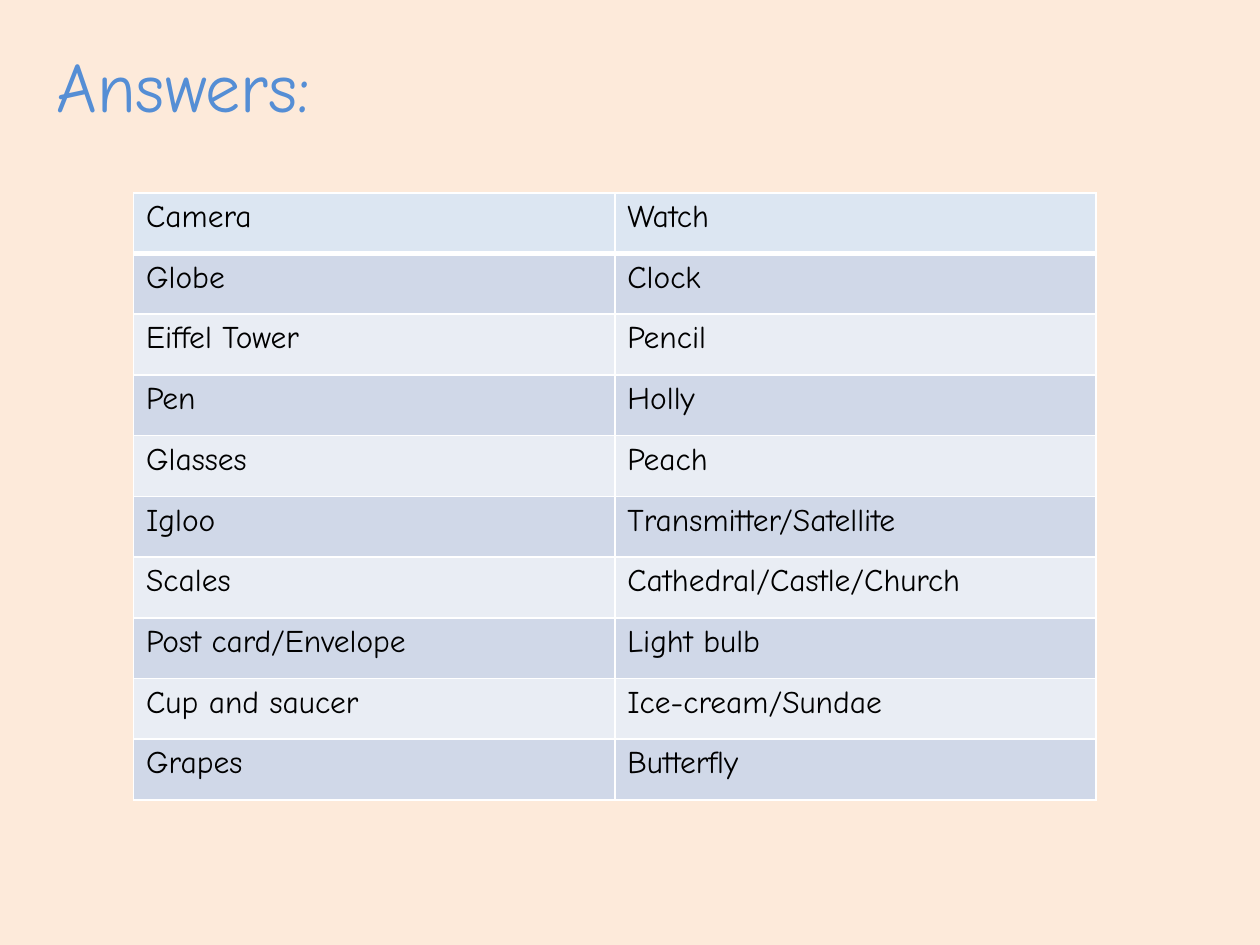
from dataclasses import dataclass
from typing import NamedTuple

from lxml.etree import SubElement
from pptx import Presentation
from pptx.dml.color import RGBColor as RGB
from pptx.enum.text import MSO_ANCHOR as Anchor, MSO_AUTO_SIZE as AutoSize, PP_ALIGN as Align
from pptx.oxml.ns import qn
from pptx.util import Inches, Pt


@dataclass(frozen=True)
class Theme:
    font: str = "Comic Neue"
    title_size: Pt = Pt(40)
    cell_size: Pt = Pt(18)
    thin_line: Pt = Pt(1)
    thick_line: Pt = Pt(3)
    background: RGB = RGB(0xFD, 0xEA, 0xDA)
    title: RGB = RGB(0x55, 0x8E, 0xD5)
    text: RGB = RGB(0, 0, 0)
    border: RGB = RGB(0xFF, 0xFF, 0xFF)
    first_row: RGB = RGB(0xDC, 0xE6, 0xF2)
    bands: tuple[RGB, RGB] = (RGB(0xE9, 0xED, 0xF4), RGB(0xD0, 0xD8, 0xE8))


class AnswerRow(NamedTuple):
    left: str
    right: str


THEME = Theme()
ANSWERS = [
    AnswerRow("Camera", "Watch"),
    AnswerRow("Globe", "Clock"),
    AnswerRow("Eiffel Tower", "Pencil"),
    AnswerRow("Pen", "Holly"),
    AnswerRow("Glasses", "Peach"),
    AnswerRow("Igloo", "Transmitter/Satellite"),
    AnswerRow("Scales", "Cathedral/Castle/Church"),
    AnswerRow("Post card/Envelope", "Light bulb"),
    AnswerRow("Cup and saucer", "Ice-cream/Sundae"),
    AnswerRow("Grapes", "Butterfly"),
]


def set_attrs(obj, values: dict) -> None:
    for name, value in values.items():
        setattr(obj, name, value)


def write(tf, text: str, size: Pt, color: RGB) -> None:
    p = tf.paragraphs[0]
    p.alignment = Align.LEFT
    r = p.add_run()
    r.text = text
    set_attrs(r.font, {"name": THEME.font, "size": size, "bold": False})
    r.font.color.rgb = color


def add_borders(cell, widths: dict[str, Pt]) -> None:
    """Add side lines (L, R, T, B in that order); call before filling the cell."""
    tc_pr = cell._tc.get_or_add_tcPr()
    for side, width in widths.items():
        line = SubElement(tc_pr, qn(f"a:ln{side}"), w=str(width))
        fill = SubElement(line, qn("a:solidFill"))
        SubElement(fill, qn("a:srgbClr"), val=str(THEME.border))


def add_title(slide, text: str) -> None:
    sp = slide.shapes.title
    set_attrs(sp, {"left": Inches(0.35), "top": Inches(0.29),
                   "width": Inches(2.68), "height": Inches(1.38)})
    set_attrs(sp.text_frame, {"word_wrap": True, "auto_size": AutoSize.NONE,
                              "vertical_anchor": Anchor.TOP})
    write(sp.text_frame, text, THEME.title_size, THEME.title)


def add_answers(slide, answers: list[AnswerRow]) -> None:
    """Draw the table; below the first row its default style gives the borders."""
    n_rows, n_cols = len(answers), len(AnswerRow._fields)
    table = slide.shapes.add_table(
        n_rows, n_cols, Inches(1.06), Inches(1.53),
        Inches(3.82) * n_cols, Inches(4.82)).table
    first_row_lines = dict.fromkeys("LRT", THEME.thin_line) | {"B": THEME.thick_line}
    for i, answer in enumerate(answers):
        fill = THEME.bands[i % 2] if i else THEME.first_row
        for j, text in enumerate(answer):
            cell = table.cell(i, j)
            if i == 0:
                add_borders(cell, first_row_lines)
            cell.fill.solid()
            cell.fill.fore_color.rgb = fill
            write(cell.text_frame, text, THEME.cell_size, THEME.text)


def main() -> None:
    prs = Presentation()
    set_attrs(prs, {"slide_width": Inches(10), "slide_height": Inches(7.5)})
    slide = prs.slides.add_slide(prs.slide_layouts.get_by_name("Title Only"))
    slide.background.fill.solid()
    slide.background.fill.fore_color.rgb = THEME.background
    add_title(slide, "Answers:")
    add_answers(slide, ANSWERS)
    prs.save("out.pptx")


if __name__ == "__main__":
    main()
